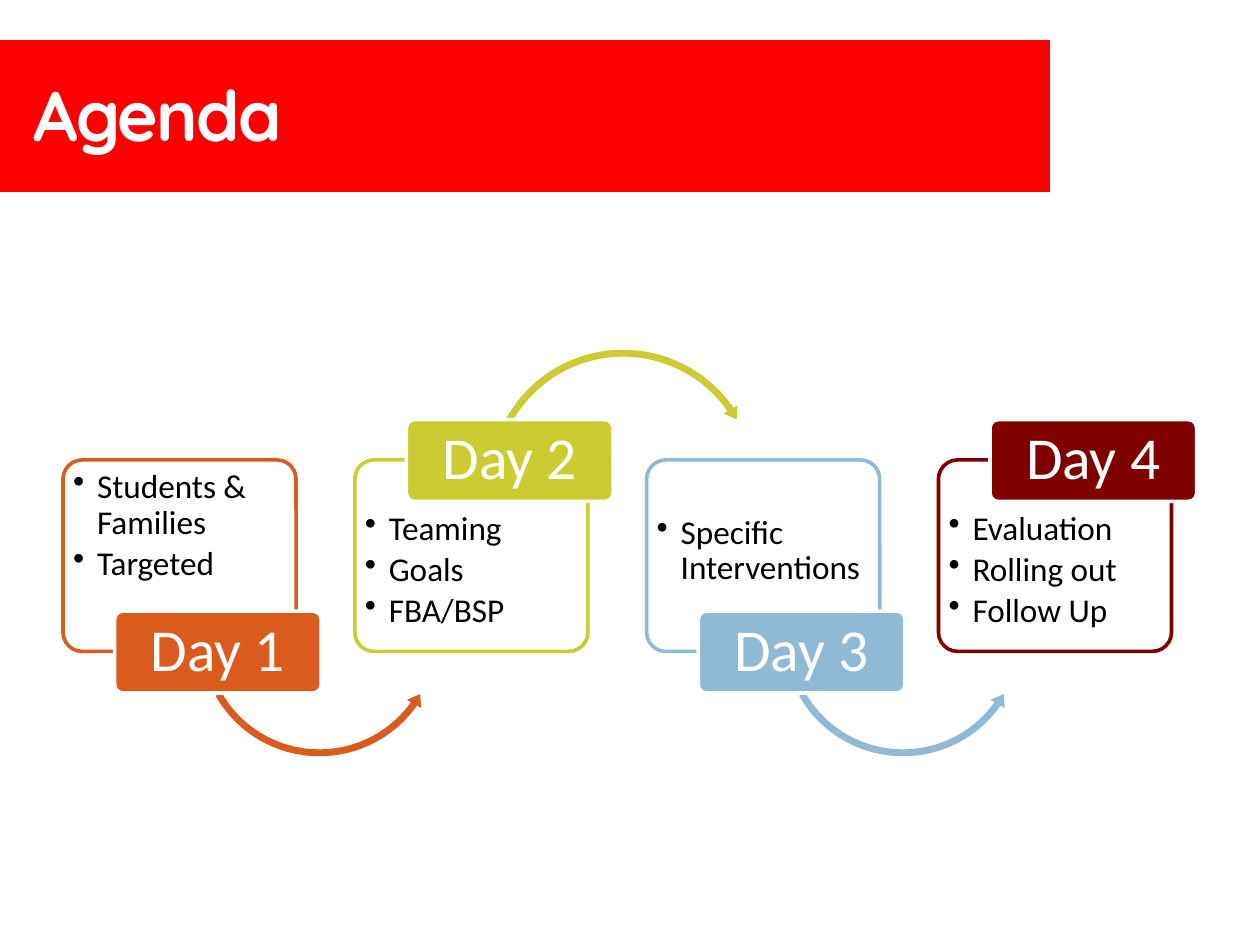
import pptx
import pptx.util
import pptx.dml.color
import pptx.enum.shapes
import pptx.enum.text
import lxml.etree
import pptx.oxml.ns

Inches = pptx.util.Inches
Pt = pptx.util.Pt
RGBColor = pptx.dml.color.RGBColor
Kind = pptx.enum.shapes.MSO_SHAPE
Align = pptx.enum.text.PP_ALIGN
Anchor = pptx.enum.text.MSO_ANCHOR
qn = pptx.oxml.ns.qn

RED = RGBColor(0xFF, 0x00, 0x00)
WHITE = RGBColor(0xFF, 0xFF, 0xFF)
BLACK = RGBColor(0x00, 0x00, 0x00)
ORANGE = RGBColor(0xDB, 0x5A, 0x1E)
LIME = RGBColor(0xCC, 0xCB, 0x31)
BLUE = RGBColor(0x8F, 0xB9, 0xD4)
MAROON = RGBColor(0x80, 0x00, 0x00)

deck = pptx.Presentation()
deck.slide_width = Inches(10)
deck.slide_height = Inches(7.5)
slide = deck.slides.add_slide(deck.slide_layouts[6])


def add_shape(kind, left, top, width, height, fill, line=None, weight=2.08, adjust=()):
    shape = slide.shapes.add_shape(
        kind, Inches(left), Inches(top), Inches(width), Inches(height))
    shape.shadow.inherit = False
    shape.fill.solid()
    shape.fill.fore_color.rgb = fill
    if line is None:
        shape.line.fill.background()
    else:
        shape.line.color.rgb = line
        shape.line.width = Pt(weight)
    for i, value in enumerate(adjust):
        shape.adjustments[i] = value
    return shape


def add_run(para, text, size, color, font="Calibri"):
    run = para.add_run()
    run.text = text
    run.font.name = font
    run.font.size = Pt(size)
    run.font.color.rgb = color
    return run


# Title band
add_shape(Kind.RECTANGLE, -0.08, 0.31, 8.42, 1.22, RED, WHITE, 0.75)
title = slide.shapes.add_textbox(Inches(0.17), Inches(0.36), Inches(8.17), Inches(1.08))
frame = title.text_frame
frame.word_wrap = True
frame.vertical_anchor = Anchor.MIDDLE
run = add_run(frame.paragraphs[0], "Agenda", 40, WHITE, "Quicksand")
run.font.bold = True
run._r.get_or_add_rPr().set("spc", "-100")

# Each day: label, colour, text top, topics
days = [
    ("Day 1", ORANGE, 3.69, ["Students & Families", "Targeted"]),
    ("Day 2", LIME, 4.02, ["Teaming", "Goals", "FBA/BSP"]),
    ("Day 3", BLUE, 4.05, ["Specific Interventions"]),
    ("Day 4", MAROON, 4.02, ["Evaluation", "Rolling out", "Follow Up"]),
]
PITCH = 2.316

for i, (label, color, top, topics) in enumerate(days):
    left = 0.5 + i * PITCH
    low = i % 2 == 0  # label and arrow sit below the card

    # Card
    card = add_shape(Kind.ROUNDED_RECTANGLE, left, 3.65, 1.85, 1.52,
                     WHITE, color, adjust=[0.1])
    tint = card.fill._xPr.find(qn("a:solidFill"))[0]
    lxml.etree.SubElement(tint, qn("a:alpha")).set("val", "90000")

    # Topics
    box = slide.shapes.add_textbox(
        Inches(left + 0.04), Inches(top), Inches(1.78), Inches(1.13))
    frame = box.text_frame
    frame.word_wrap = True
    frame.margin_left = frame.margin_right = Inches(0.04)
    frame.margin_top = frame.margin_bottom = Inches(0.04)
    for n, topic in enumerate(topics):
        para = frame.paragraphs[0] if n == 0 else frame.add_paragraph()
        para.line_spacing = 0.9
        para.space_after = Pt(2.85)
        props = para._p.get_or_add_pPr()
        props.set("marL", str(Inches(0.19)))
        props.set("indent", str(Inches(-0.19)))
        lxml.etree.SubElement(props, qn("a:buChar")).set("char", "•")
        add_run(para, topic, 19, BLACK)

    # Arrow to the next day
    if i < len(days) - 1:
        if low:
            add_shape(Kind.LEFT_CIRCULAR_ARROW, left + 1.05, 4.07, 1.97, 1.97, color,
                      adjust=[0.028, 3.418, 21.173, 90.245, 0.033])
        else:
            add_shape(Kind.CIRCULAR_ARROW, left + 1.03, 2.74, 2.2, 2.2, color,
                      adjust=[0.025, 3.031, 195.214, 125.755, 0.029])

    # Day label
    badge = add_shape(Kind.ROUNDED_RECTANGLE, left + 0.41, 4.85 if low else 3.33,
                      1.64, 0.65, color, WHITE, adjust=[0.1])
    frame = badge.text_frame
    frame.word_wrap = True
    frame.vertical_anchor = Anchor.MIDDLE
    frame.margin_left = frame.margin_right = Inches(0.07)
    frame.margin_top = frame.margin_bottom = Inches(0.05)
    para = frame.paragraphs[0]
    para.alignment = Align.CENTER
    para.line_spacing = 0.9
    add_run(para, label, 34, WHITE)

deck.save("out.pptx")
